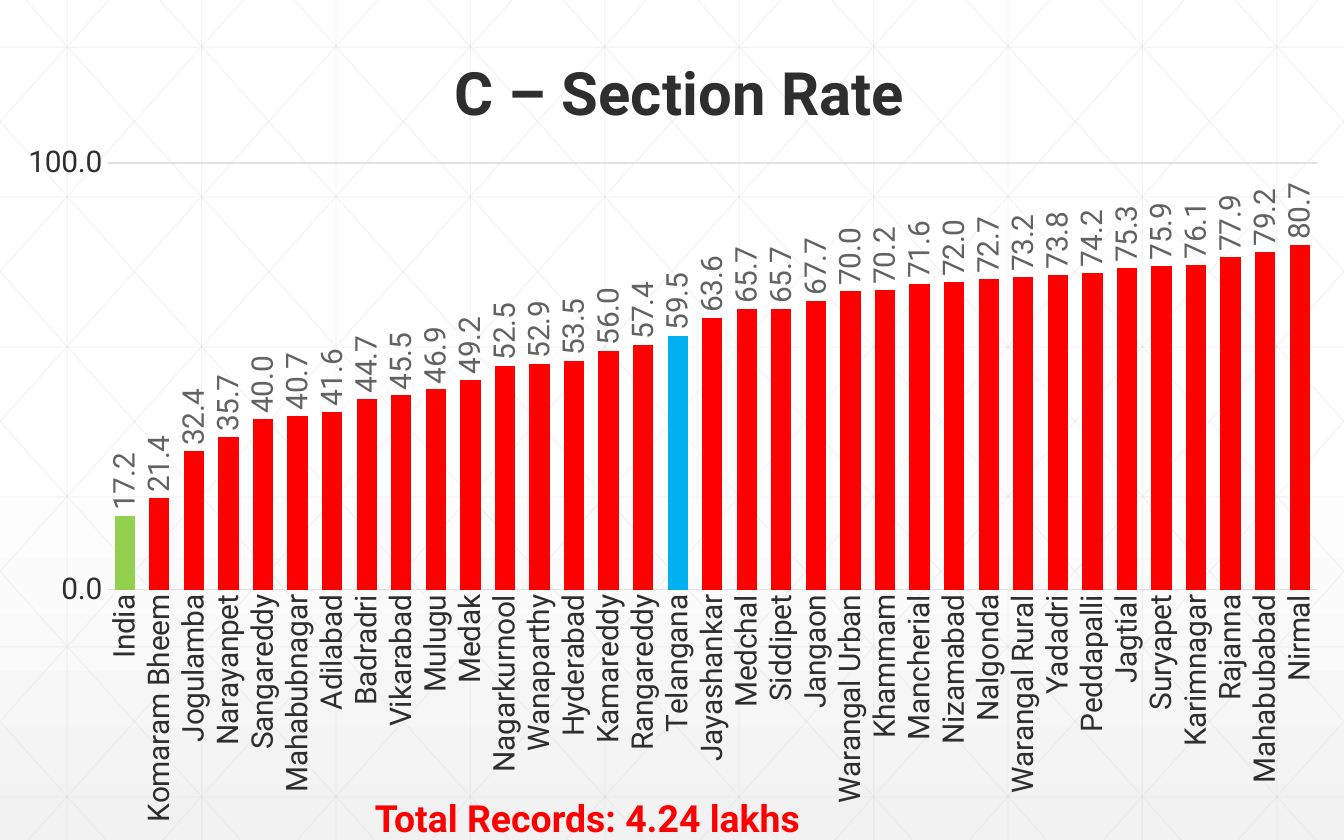
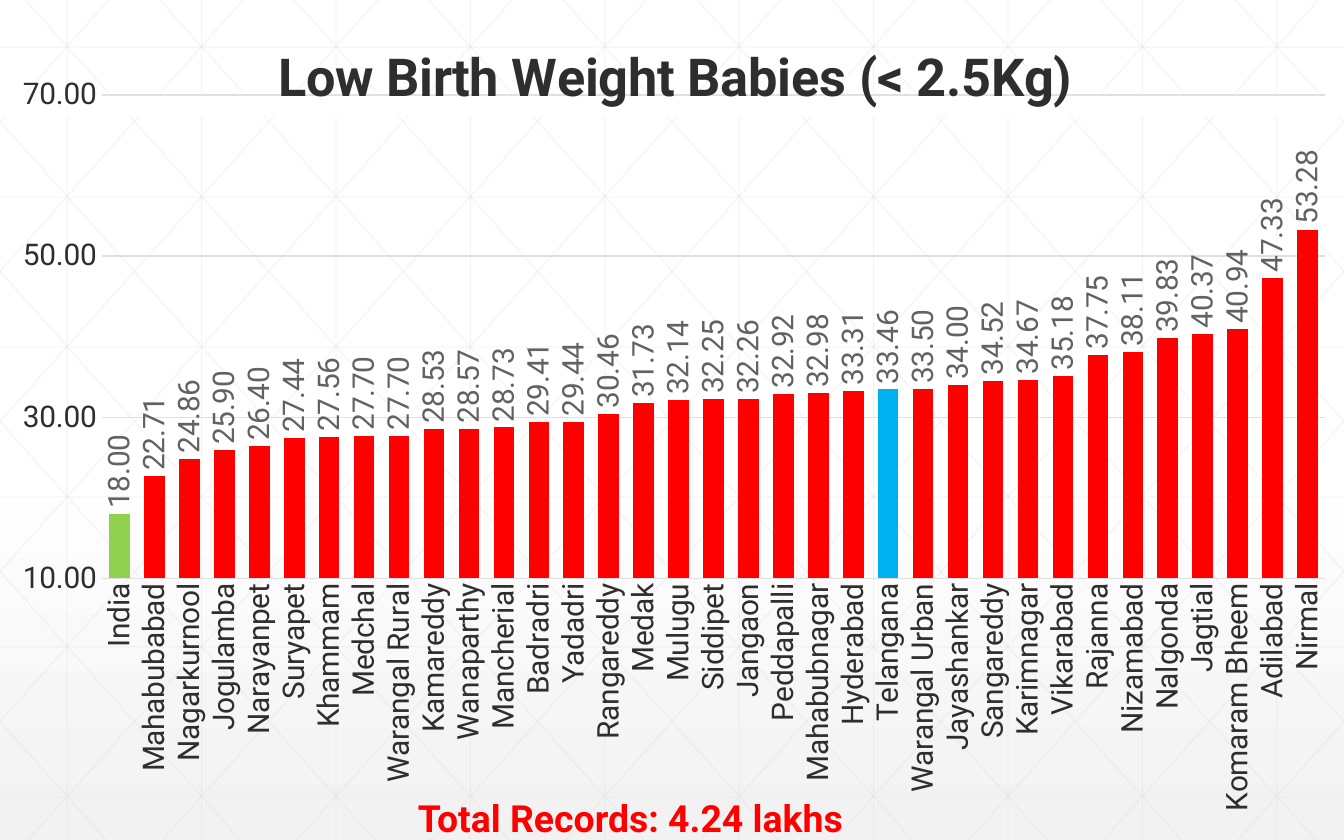
"""Two district column charts on a shared patterned master."""
from lxml import etree
from pptx import Presentation
from pptx.chart.data import CategoryChartData
from pptx.dml.color import RGBColor
from pptx.enum.chart import XL_CHART_TYPE as CT, XL_LABEL_POSITION as LP, XL_TICK_MARK as TM
from pptx.enum.shapes import MSO_CONNECTOR as MC, MSO_SHAPE as MS
from pptx.oxml.ns import qn
from pptx.util import Inches, Pt

W, H = 10, 6.25
FONT = "Roboto"
COLORS = {
    "text": "2D2E2D", "label": "616361", "axis": "DFE0DF", "pattern": "D9D9D9",
    "white": "FFFFFF", "shade": "F2F2F2", "bar": "FF0000", "note": "FF0000",
}
HIGHLIGHTS = {"India": "92D050", "Telangana": "00B0F0"}
NOTE = "Total Records: 4.24 lakhs"

C_SECTION = [
    ("India", 17.2), ("Komaram Bheem", 21.4), ("Jogulamba", 32.4), ("Narayanpet", 35.7),
    ("Sangareddy", 40), ("Mahabubnagar", 40.7), ("Adilabad", 41.6), ("Badradri", 44.7),
    ("Vikarabad", 45.5), ("Mulugu", 46.9), ("Medak", 49.2), ("Nagarkurnool", 52.5),
    ("Wanaparthy", 52.9), ("Hyderabad", 53.5), ("Kamareddy", 56), ("Rangareddy", 57.4),
    ("Telangana", 59.5), ("Jayashankar", 63.6), ("Medchal", 65.7), ("Siddipet", 65.7),
    ("Jangaon", 67.7), ("Warangal Urban", 70), ("Khammam", 70.2), ("Mancherial", 71.6),
    ("Nizamabad", 72), ("Nalgonda", 72.7), ("Warangal Rural", 73.2), ("Yadadri", 73.8),
    ("Peddapalli", 74.2), ("Jagtial", 75.3), ("Suryapet", 75.9), ("Karimnagar", 76.1),
    ("Rajanna", 77.9), ("Mahabubabad", 79.2), ("Nirmal", 80.7),
]
LOW_WEIGHT = [
    ("India", 18), ("Mahabubabad", 22.71), ("Nagarkurnool", 24.86), ("Jogulamba", 25.9),
    ("Narayanpet", 26.4), ("Suryapet", 27.44), ("Khammam", 27.56), ("Medchal", 27.7),
    ("Warangal Rural", 27.7), ("Kamareddy", 28.53), ("Wanaparthy", 28.57),
    ("Mancherial", 28.73), ("Badradri", 29.41), ("Yadadri", 29.44), ("Rangareddy", 30.46),
    ("Medak", 31.73), ("Mulugu", 32.14), ("Siddipet", 32.25), ("Jangaon", 32.26),
    ("Peddapalli", 32.92), ("Mahabubnagar", 32.98), ("Hyderabad", 33.31),
    ("Telangana", 33.46), ("Warangal Urban", 33.5), ("Jayashankar", 34),
    ("Sangareddy", 34.52), ("Karimnagar", 34.67), ("Vikarabad", 35.18), ("Rajanna", 37.75),
    ("Nizamabad", 38.11), ("Nalgonda", 39.83), ("Jagtial", 40.37), ("Komaram Bheem", 40.94),
    ("Adilabad", 47.33), ("Nirmal", 53.28),
]
SLIDES = [
    dict(title="C – Section Rate", size=32, title_at=(0.33, 0.05), rows=C_SECTION,
         scale=(0, 100, 100), fmt="0.0", height=6.25, plot=(0.08, 0.194, 0.9, 0.508),
         note_left=2.69, band=None),
    dict(title="Low Birth Weight Babies (< 2.5Kg)", size=28, title_at=(0.2, 0.04),
         rows=LOW_WEIGHT, scale=(10, 70, 20), fmt="0.00", height=6.15,
         plot=(0.076, 0.115, 0.91, 0.585), note_left=3.01, band=(0.01, 0.69, 9.99, 0.17)),
]


def rgb(name):
    return RGBColor.from_string(COLORS.get(name, name))


def style_font(font, size, color, bold=False):
    font.name, font.size, font.bold = FONT, Pt(size), bold
    font.color.rgb = rgb(color)


def add_sub(parent, tag, **attrs):
    return etree.SubElement(parent, qn(tag), {k: str(v) for k, v in attrs.items()})


def pattern_lines():
    lines = [(i + 0.5, 0, i + 0.5, H) for i in range(10)]
    step = (5.93 - 0.35) / 5
    lines += [(0, 0.35 + i * step, W, 0.35 + i * step) for i in range(6)]
    run = 5.6 / H
    for i in range(-5, 10):
        x = 0.19 + i
        top, bottom = max(0, -x / run), min(H, (W - x) / run)
        x1, x2 = x + top * run, x + bottom * run
        lines += [(x1, top, x2, bottom), (W - x1, top, W - x2, bottom)]
    return lines


def style_master(prs, s):
    master = prs.slide_master
    fill = master.background.fill
    fill.gradient()
    grad = master.element.find(".//" + qn("a:gradFill"))
    stops = grad.find(qn("a:gsLst"))
    for stop in list(stops):
        stops.remove(stop)
    for pos, color, alpha in ((0, "white", 100), (53, "white", 100), (100, "shade", 65)):
        clr = add_sub(add_sub(stops, "a:gs", pos=pos * 1000), "a:srgbClr", val=COLORS[color])
        if alpha < 100:
            add_sub(clr, "a:alpha", val=alpha * 1000)
    grad.find(qn("a:lin")).set("ang", "5400000")

    for n, ends in enumerate(pattern_lines()):
        c = s.shapes.add_connector(MC.STRAIGHT, *map(Inches, ends))
        c.line.width = Pt(0.5)
        c.line.color.rgb = rgb("pattern")
        add_sub(c.element.find(".//" + qn("a:srgbClr")), "a:alpha", val=30000)
        add_sub(c.element.spPr, "a:effectLst")
        c.element.find(".//" + qn("p:cNvPr")).set("id", str(100 + n))
        master.shapes.element.insert(2 + n, c.element)


def set_layout(parent, index, box, inner=False):
    for old in parent.findall(qn("c:layout")):
        parent.remove(old)
    layout = etree.Element(qn("c:layout"))
    manual = add_sub(layout, "c:manualLayout")
    if inner:
        add_sub(manual, "c:layoutTarget", val="inner")
    for key in ("xMode", "yMode"):
        add_sub(manual, "c:" + key, val="edge")
    for key, value in zip("xywh", box):
        add_sub(manual, "c:" + key, val=value)
    parent.insert(index, layout)


def style_axes(chart, scale, fmt):
    cat, val = chart.category_axis, chart.value_axis
    for axis in (cat, val):
        axis.major_tick_mark = axis.minor_tick_mark = TM.NONE
        style_font(axis.tick_labels.font, 16, "text")
    val.minimum_scale, val.maximum_scale, val.major_unit = scale
    val.tick_labels.number_format, val.tick_labels.number_format_is_linked = fmt, False
    val.format.line.fill.background()
    for line in (cat.format.line, val.major_gridlines.format.line):
        line.color.rgb, line.width = rgb("axis"), Pt(0.75)


def style_bars(plot, rows, fmt):
    plot.gap_width, plot.overlap, plot.vary_by_categories = 70, -20, False
    series = plot.series[0]
    series.invert_if_negative = False
    series.format.fill.solid()
    series.format.fill.fore_color.rgb = rgb("bar")
    for i, (name, _) in enumerate(rows):
        if name in HIGHLIGHTS:
            fill = series.points[i].format.fill
            fill.solid()
            fill.fore_color.rgb = rgb(HIGHLIGHTS[name])
    labels = series.data_labels
    labels.show_value, labels.position = True, LP.OUTSIDE_END
    labels.number_format, labels.number_format_is_linked = fmt, False
    style_font(labels.font, 16, "label")


def add_column_chart(s, d):
    data = CategoryChartData(number_format=d["fmt"])
    data.categories = [name for name, _ in d["rows"]]
    data.add_series("Series 1", [value for _, value in d["rows"]])
    frame = s.shapes.add_chart(CT.COLUMN_CLUSTERED, 0, 0, Inches(W), Inches(d["height"]), data)
    chart = frame.chart
    chart.has_legend = False
    style_font(chart.font, 16, "text")
    style_axes(chart, d["scale"], d["fmt"])
    style_bars(chart.plots[0], d["rows"], d["fmt"])
    chart.has_title = True
    p = chart.chart_title.text_frame.paragraphs[0]
    p.text = d["title"]
    style_font(p.runs[0].font, d["size"], "text", True)
    root = chart.element
    set_layout(root.find(".//" + qn("c:title")), 1, d["title_at"])
    set_layout(root.find(".//" + qn("c:plotArea")), 0, d["plot"], inner=True)
    for tag in ("c:catAx", "c:dLbls"):
        body = root.find(f".//{qn(tag)}/{qn('c:txPr')}/{qn('a:bodyPr')}")
        body.set("rot", "-5400000")
        body.set("vert", "horz")


def add_note(s, left):
    tf = s.shapes.add_textbox(*map(Inches, (left, 5.87, 3.62, 0.38))).text_frame
    tf.word_wrap = True
    tf.text = NOTE
    style_font(tf.paragraphs[0].runs[0].font, 20, "note", True)


def add_band(s, box):
    sp = s.shapes.add_shape(MS.RECTANGLE, *map(Inches, box))
    sp.shadow.inherit = False
    sp.fill.solid()
    sp.fill.fore_color.rgb = rgb("white")
    sp.line.fill.background()


def main():
    prs = Presentation()
    prs.slide_width, prs.slide_height = Inches(W), Inches(H)
    for i, d in enumerate(SLIDES):
        s = prs.slides.add_slide(prs.slide_layouts[6])
        if i == 0:
            style_master(prs, s)
        if d["band"]:
            add_band(s, d["band"])
        add_column_chart(s, d)
        add_note(s, d["note_left"])
    prs.save("out.pptx")


if __name__ == "__main__":
    main()
